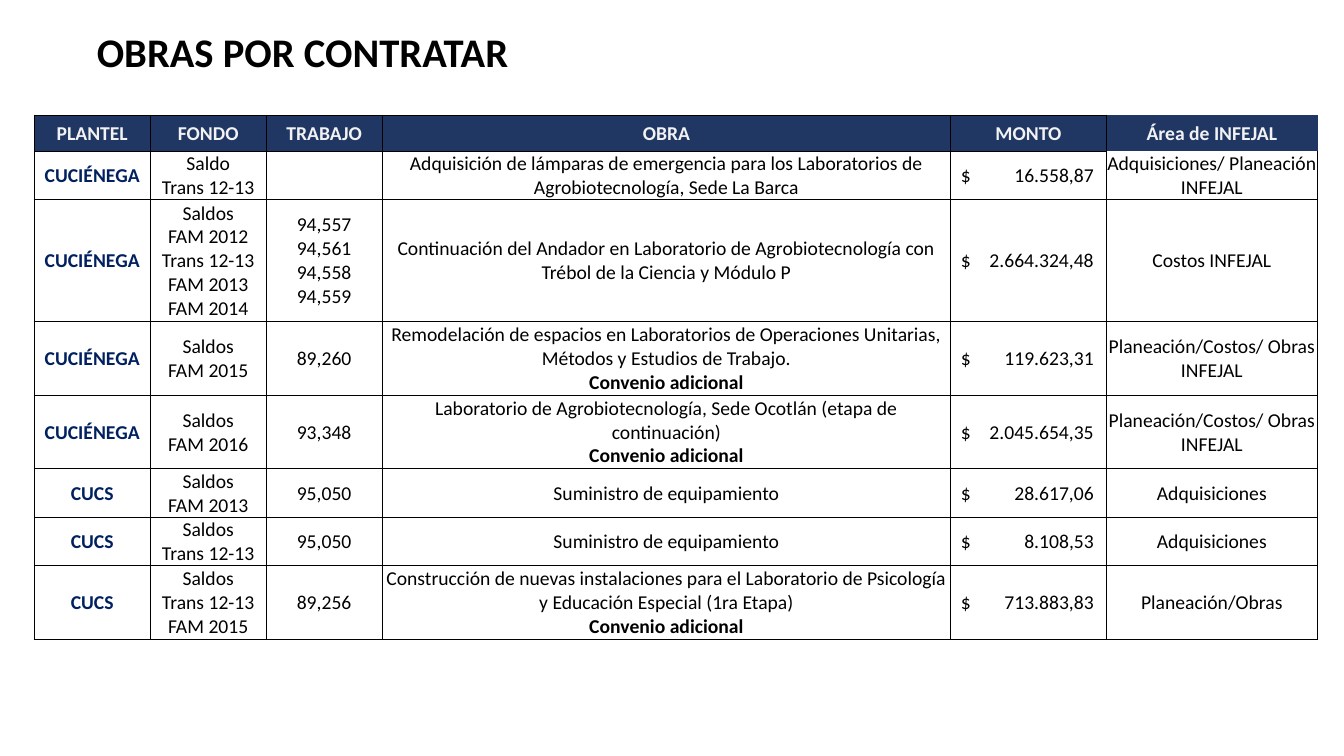
from dataclasses import dataclass

from lxml import etree
from pptx import Presentation
from pptx.dml.color import RGBColor
from pptx.enum.text import MSO_ANCHOR, MSO_AUTO_SIZE, PP_ALIGN
from pptx.oxml.ns import qn
from pptx.util import Inches, Pt

LEFT, CENTER = PP_ALIGN.LEFT, PP_ALIGN.CENTER
MIDDLE = MSO_ANCHOR.MIDDLE
GROW = MSO_AUTO_SIZE.SHAPE_TO_FIT_TEXT


@dataclass
class Theme:
    font: str = "Calibri"
    head: int = 29
    body: int = 14
    rule: float = 0.5
    ink: str = "000000"
    navy: str = "203764"
    blue: str = "002060"
    pale: str = "F2F2F2"
    white: str = "FFFFFF"


WIDTHS = [1.15, 1.15, 1.15, 5.64, 1.54, 2.1]
HEIGHTS = [0.36, 0.48, 1.21, 0.73, 0.73, 0.48, 0.48, 0.73]
MONEY, AREA = 4, 5
EXTRA = "Convenio adicional"
WORKS = [
    ["PLANTEL", "FONDO", "TRABAJO", "OBRA", "MONTO", "Área de INFEJAL"],
    ["CUCIÉNEGA", "Saldo\nTrans 12-13", "",
     "Adquisición de lámparas de emergencia para los Laboratorios de "
     "Agrobiotecnología, Sede La Barca",
     "16.558,87", "Adquisiciones/ Planeación INFEJAL"],
    ["CUCIÉNEGA", "Saldos\nFAM 2012\nTrans 12-13\nFAM 2013\nFAM 2014",
     "94,557\n94,561\n94,558\n94,559",
     "Continuación del Andador en Laboratorio de Agrobiotecnología con "
     "Trébol de la Ciencia y Módulo P",
     "2.664.324,48", "Costos INFEJAL"],
    ["CUCIÉNEGA", "Saldos\nFAM 2015", "89,260",
     "Remodelación de espacios en Laboratorios de Operaciones Unitarias, "
     f"Métodos y Estudios de Trabajo.\n{EXTRA}",
     "119.623,31", "Planeación/Costos/ Obras INFEJAL"],
    ["CUCIÉNEGA", "Saldos\nFAM 2016", "93,348",
     "Laboratorio de Agrobiotecnología, Sede Ocotlán (etapa de "
     f"continuación)\n{EXTRA}",
     "2.045.654,35", "Planeación/Costos/ Obras INFEJAL"],
    ["CUCS", "Saldos\nFAM 2013", "95,050", "Suministro de equipamiento",
     "28.617,06", "Adquisiciones"],
    ["CUCS", "Saldos\nTrans 12-13", "95,050", "Suministro de equipamiento",
     "8.108,53", "Adquisiciones"],
    ["CUCS", "Saldos\nTrans 12-13\nFAM 2015", "89,256",
     "Construcción de nuevas instalaciones para el Laboratorio de Psicología "
     f"y Educación Especial (1ra Etapa)\n{EXTRA}",
     "713.883,83", "Planeación/Obras"],
]


def adorn(item, form):
    for name, value in form.items():
        setattr(item, name, value)


class Page:
    def __init__(self, deck, theme):
        self.theme = theme
        self.slide = deck.slides.add_slide(deck.slide_layouts[5])

    def label(self, para, text, size, color, bold):
        run = para.add_run()
        run.text = text
        adorn(run.font, {"name": self.theme.font, "size": Pt(size), "bold": bold})
        run.font.color.rgb = RGBColor.from_string(color)

    def title(self, text, left, top, width, height):
        box = self.slide.shapes.title
        adorn(box, {"left": Inches(left), "top": Inches(top),
                    "width": Inches(width), "height": Inches(height)})
        adorn(box.text_frame, {"word_wrap": True, "auto_size": GROW})
        para = box.text_frame.paragraphs[0]
        para.alignment = LEFT
        self.label(para, text, self.theme.head, self.theme.ink, True)

    def border(self, cell, sides):
        props = cell._tc.get_or_add_tcPr()
        for side in "LRTB":
            line = etree.SubElement(props, qn(f"a:ln{side}"), w=str(Pt(self.theme.rule)))
            if side in sides:
                fill = etree.SubElement(line, qn("a:solidFill"))
                etree.SubElement(fill, qn("a:srgbClr"), val=self.theme.ink)
            else:
                etree.SubElement(line, qn("a:noFill"))

    def stop(self, para, place):
        tabs = etree.SubElement(para._p.get_or_add_pPr(), qn("a:tabLst"))
        etree.SubElement(tabs, qn("a:tab"), pos=str(Inches(place)), algn="r")

    def cell(self, cell, text, row, col):
        theme = self.theme
        head, money = row == 0, row > 0 and col == MONEY
        color = theme.pale if head else theme.blue if col == 0 else theme.ink

        # Borders and fill
        sides = "LRTB"
        if col == AREA:
            sides = {0: "L", 1: "LRB"}.get(row, sides)
        self.border(cell, sides)
        cell.fill.solid()
        cell.fill.fore_color.rgb = RGBColor.from_string(theme.navy if head else theme.white)
        adorn(cell, {"vertical_anchor": MIDDLE, "margin_top": Inches(0.01),
                     "margin_left": Inches(0.1 if money else 0.01),
                     "margin_right": Inches(0.01), "margin_bottom": 0})

        # Text, one paragraph a line
        frame = cell.text_frame
        for i, line in enumerate(text.split("\n") if text else []):
            para = frame.add_paragraph() if i else frame.paragraphs[0]
            para.alignment = LEFT if money else CENTER
            if money:
                self.stop(para, 1.32)
                line = f"$\t{line}"
            self.label(para, line, theme.body, color, head or col == 0 or line == EXTRA)

    def table(self, rows, left, top):
        frame = self.slide.shapes.add_table(
            len(rows), len(WIDTHS), Inches(left), Inches(top),
            Inches(sum(WIDTHS)), Inches(sum(HEIGHTS)))
        grid = frame.table
        adorn(grid, {"first_row": False, "horz_banding": False})
        for col, width in zip(grid.columns, WIDTHS):
            col.width = Inches(width)
        for r, (texts, height) in enumerate(zip(rows, HEIGHTS)):
            grid.rows[r].height = Inches(height)
            for c, text in enumerate(texts):
                self.cell(grid.cell(r, c), text, r, c)


def main():
    deck = Presentation()
    adorn(deck, {"slide_width": Inches(13.33), "slide_height": Inches(7.5)})
    page = Page(deck, Theme())
    page.table(WORKS, 0.34, 1.14)
    page.title("OBRAS POR CONTRATAR", 0.86, 0.21, 6.67, 0.59)
    deck.save("out.pptx")


if __name__ == "__main__":
    main()
